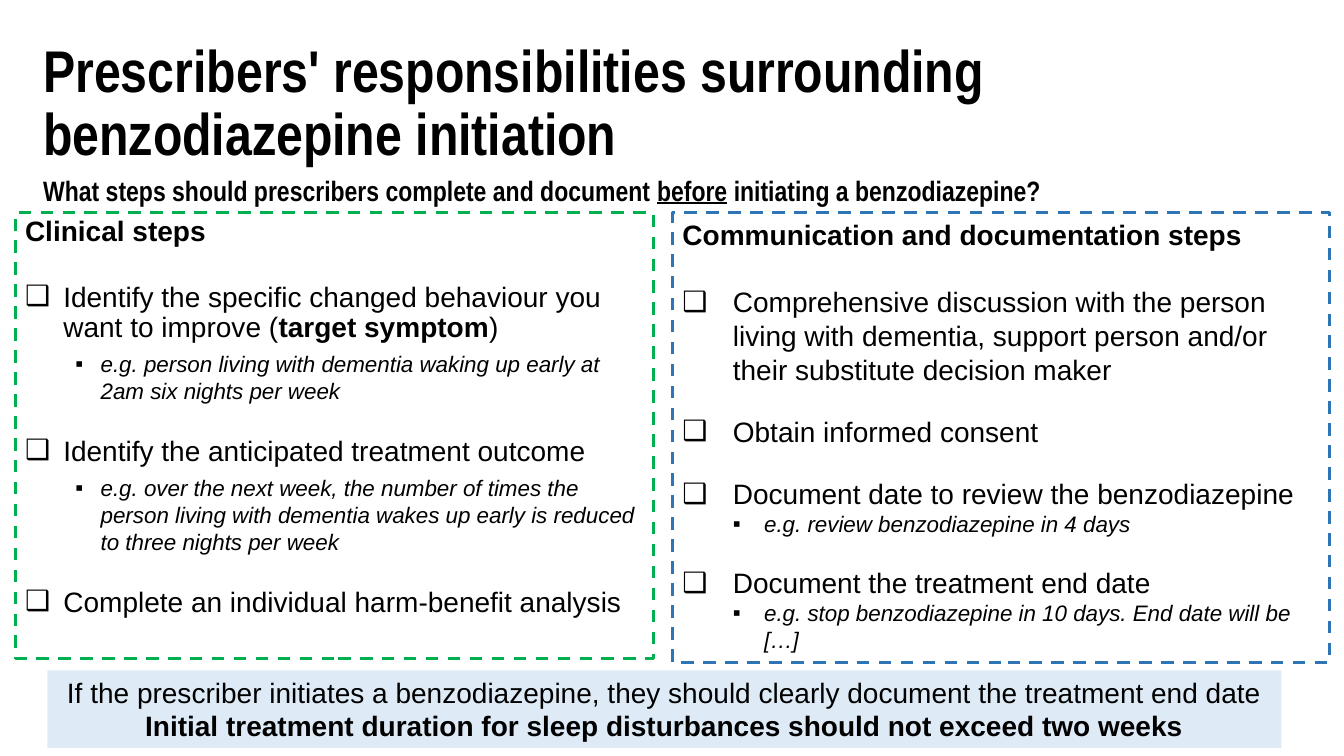
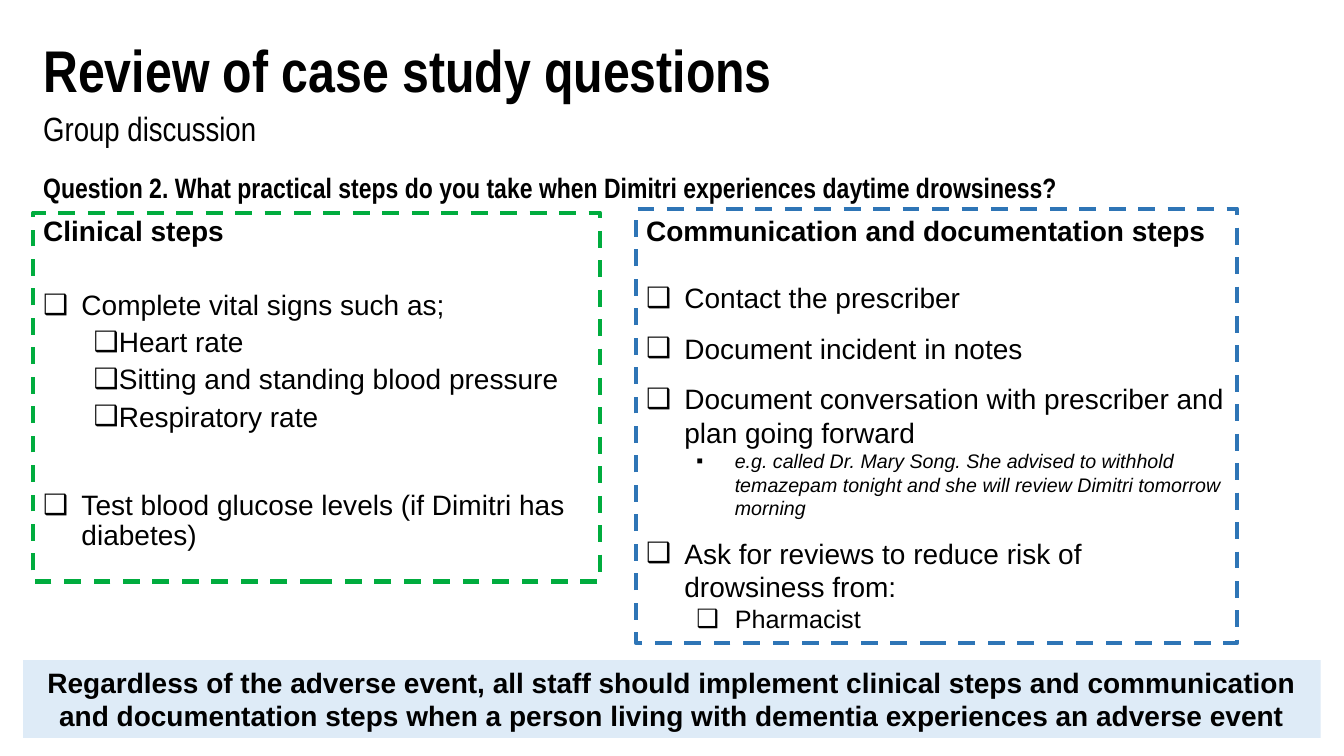
"""Build two slides on prescribing steps and a case study review."""
from lxml import etree
from pptx import Presentation
from pptx.dml.color import RGBColor
from pptx.enum.dml import MSO_LINE
from pptx.enum.shapes import MSO_SHAPE
from pptx.enum.text import MSO_ANCHOR, MSO_AUTO_SIZE, PP_ALIGN
from pptx.oxml.ns import qn
from pptx.util import Inches, Pt

RECTANGLE = MSO_SHAPE.RECTANGLE
DASH = MSO_LINE.DASH
TOP = MSO_ANCHOR.TOP
FIXED = MSO_AUTO_SIZE.NONE
LEFT, CENTER = PP_ALIGN.LEFT, PP_ALIGN.CENTER

COLORS = {"text": "000000", "banner": "DEEBF7", "green": "00B050",
          "bright_green": "00AC3E", "blue": "2E75B6"}
BODY_FONT, TITLE_FONT = "Arial", "Arial Narrow"
MARGIN = 0.33
CHECKBOX, SQUARE = "❑", "▪"
TIGHT = 0.9

HEADING = {"size": 20, "bold": True}
CHECK = {"size": 20, "bullet": CHECKBOX, "level": 0}
SUBCHECK = {"size": 20, "bullet": CHECKBOX, "level": 1}
SMALL_SUBCHECK = {**SUBCHECK, "size": 18}
EXAMPLE = {"size": 16, "italic": True, "bullet": SQUARE, "level": 1}
SMALL_EXAMPLE = {**EXAMPLE, "size": 14}

# Each panel item holds style, space before in points, line spacing and text.
SLIDES = [
    {
        "title": ("Prescribers' responsibilities surrounding benzodiazepine initiation", 10.04),
        "lines": [
            ("What steps should prescribers complete and document **before** "
             "initiating a benzodiazepine?", 1.71, {"size": 20, "bold": True, "emphasis": "underline"}),
        ],
        "border": 2.25,
        "panels": [
            {"box": (0.15, 2.11, 6.33, 4.42), "color": "green",
             "indents": [(0.38, 0.38), (0.75, 0.25)],
             "items": [
                 (HEADING, 0, TIGHT, "Clinical steps"),
                 (CHECK, 25, TIGHT, "Identify the specific changed behaviour you want to "
                                    "improve (**target symptom**)"),
                 (EXAMPLE, 5, 1, "e.g. person living with dementia waking up early at 2am "
                                 "six nights per week"),
                 (CHECK, 21, 1, "Identify the anticipated treatment outcome"),
                 (EXAMPLE, 5, 1, "e.g. over the next week, the number of times the person living "
                                 "with dementia wakes up early is reduced to three nights per week"),
                 (CHECK, 21, 1, "Complete an individual harm-benefit analysis"),
             ]},
            {"box": (6.67, 2.11, 6.52, 4.46), "color": "blue",
             "indents": [(0.5, 0.5), (0.81, 0.31)],
             "items": [
                 (HEADING, 0, 1, "Communication and documentation steps"),
                 (CHECK, 24, 1, "Comprehensive discussion with the person living with dementia, "
                                "support person and/or their substitute decision maker"),
                 (CHECK, 20.5, 1, "Obtain informed consent"),
                 (CHECK, 20.5, 1, "Document date to review the benzodiazepine"),
                 (EXAMPLE, 0, 1, "e.g. review benzodiazepine in 4 days"),
                 (CHECK, 20.5, 1, "Document the treatment end date"),
                 (EXAMPLE, 0, 1, "e.g. stop benzodiazepine in 10 days. End date will be […]"),
             ]},
        ],
        "banner": ((0.47, 6.65, 12.24, 0.77), [
            "If the prescriber initiates a benzodiazepine, they should clearly document "
            "the treatment end date",
            "**Initial treatment duration for sleep disturbances should not exceed two weeks**",
        ]),
    },
    {
        "title": ("Review of case study questions", 11.08),
        "lines": [
            ("Group discussion", 1.07, {"size": 24}),
            ("Question 2. What practical steps do you take when Dimitri experiences "
             "daytime drowsiness?", 1.68, {"size": 20, "bold": True}),
        ],
        "border": 3,
        "panels": [
            {"box": (0.33, 2.11, 5.62, 3.66), "color": "bright_green",
             "indents": [(0.38, 0.38), (0.75, 0.25)],
             "items": [
                 (HEADING, 0, TIGHT, "Clinical steps"),
                 (CHECK, 31, TIGHT, "Complete vital signs such as;"),
                 (SUBCHECK, 5, TIGHT, "Heart rate"),
                 (SUBCHECK, 5, TIGHT, "Sitting and standing blood pressure"),
                 (SUBCHECK, 5, TIGHT, "Respiratory rate"),
                 (CHECK, 41.5, TIGHT, "Test blood glucose levels (if Dimitri has diabetes)"),
             ]},
            {"box": (6.31, 2.07, 5.96, 4.31), "color": "blue",
             "indents": [(0.38, 0.38), (0.88, 0.38)],
             "items": [
                 (HEADING, 0, 1, "Communication and documentation steps"),
                 (CHECK, 24, 1, "Contact the prescriber"),
                 (CHECK, 12, 1, "Document incident in notes"),
                 (CHECK, 12, 1, "Document conversation with prescriber and plan going forward"),
                 (SMALL_EXAMPLE, 0, 1, "e.g. called Dr. Mary Song. She advised to withhold temazepam "
                                       "tonight and she will review Dimitri tomorrow morning"),
                 (CHECK, 12, 1, "Ask for reviews to reduce risk of drowsiness from:"),
                 (SMALL_SUBCHECK, 0, 1, "Pharmacist"),
             ]},
        ],
        "banner": ((0.23, 6.55, 12.87, 0.77), [
            "**Regardless of the adverse event, all staff should implement clinical steps and "
            "communication and documentation steps when a person living with dementia "
            "experiences an adverse event**",
        ]),
    },
]


def rgb(name):
    """Return the named colour."""
    return RGBColor.from_string(COLORS[name])


def prepare_frame(shape):
    """Give a shape a wrapping, top-anchored text frame and return it."""
    frame = shape.text_frame
    frame.word_wrap = True
    frame.auto_size = FIXED
    frame.vertical_anchor = TOP
    return frame


def write(frame, index, text, *, size, font=BODY_FONT, bold=False, italic=False,
          emphasis="bold", align=LEFT, before=0, spacing=1.0, bullet=None, level=0, indents=()):
    """Write one paragraph, giving the emphasis to parts between double asterisks."""
    paragraph = frame.add_paragraph() if index else frame.paragraphs[0]
    if bullet:
        margin, hanging = indents[level]
        properties = paragraph._p.get_or_add_pPr()
        properties.set("marL", str(Inches(margin)))
        properties.set("indent", str(-Inches(hanging)))
        etree.SubElement(properties, qn("a:buFont")).set("typeface", BODY_FONT)
        etree.SubElement(properties, qn("a:buChar")).set("char", bullet)
    paragraph.level = level
    paragraph.alignment = align
    paragraph.line_spacing = spacing
    paragraph.space_before = Pt(before)
    for position, part in enumerate(text.split("**")):
        if part:
            run = paragraph.add_run()
            run.text = part
            run.font.name, run.font.size = font, Pt(size)
            run.font.bold, run.font.italic = bold, italic
            run.font.color.rgb = rgb("text")
            if position % 2:
                setattr(run.font, emphasis, True)


def add_rectangle(slide, box):
    """Add a plain rectangle without a shadow."""
    shape = slide.shapes.add_shape(RECTANGLE, *map(Inches, box))
    shape.shadow.inherit = False
    return shape


def add_title(slide, text, width):
    """Place and format the title placeholder."""
    title = slide.shapes.title
    title.left, title.top, title.width, title.height = map(Inches, (MARGIN, 0.36, width, 0.81))
    write(prepare_frame(title), 0, text, size=42, font=TITLE_FONT, bold=True, spacing=TIGHT)


def add_line(slide, text, top, style):
    """Add a line of narrow text below the title."""
    box = slide.shapes.add_textbox(*map(Inches, (MARGIN, top, 11.82, 0.4)))
    write(prepare_frame(box), 0, text, font=TITLE_FONT, spacing=TIGHT, **style)


def add_panel(slide, panel, border):
    """Add a dashed panel holding a checklist."""
    shape = add_rectangle(slide, panel["box"])
    shape.fill.background()
    shape.line.color.rgb = rgb(panel["color"])
    shape.line.width = Pt(border)
    shape.line.dash_style = DASH
    frame = prepare_frame(shape)
    for index, (style, before, spacing, text) in enumerate(panel["items"]):
        write(frame, index, text, before=before, spacing=spacing,
              indents=panel["indents"], **style)


def add_banner(slide, box, texts):
    """Add the tinted banner at the foot of the slide."""
    shape = add_rectangle(slide, box)
    shape.fill.solid()
    shape.fill.fore_color.rgb = rgb("banner")
    shape.line.fill.background()
    frame = prepare_frame(shape)
    for index, text in enumerate(texts):
        write(frame, index, text, size=20, align=CENTER)


def main():
    """Build and save the presentation."""
    presentation = Presentation()
    presentation.slide_width, presentation.slide_height = Inches(13.33), Inches(7.5)
    for content in SLIDES:
        slide = presentation.slides.add_slide(presentation.slide_layouts[5])
        add_title(slide, *content["title"])
        for line in content["lines"]:
            add_line(slide, *line)
        for panel in content["panels"]:
            add_panel(slide, panel, content["border"])
        add_banner(slide, *content["banner"])
    presentation.save("out.pptx")


if __name__ == "__main__":
    main()
